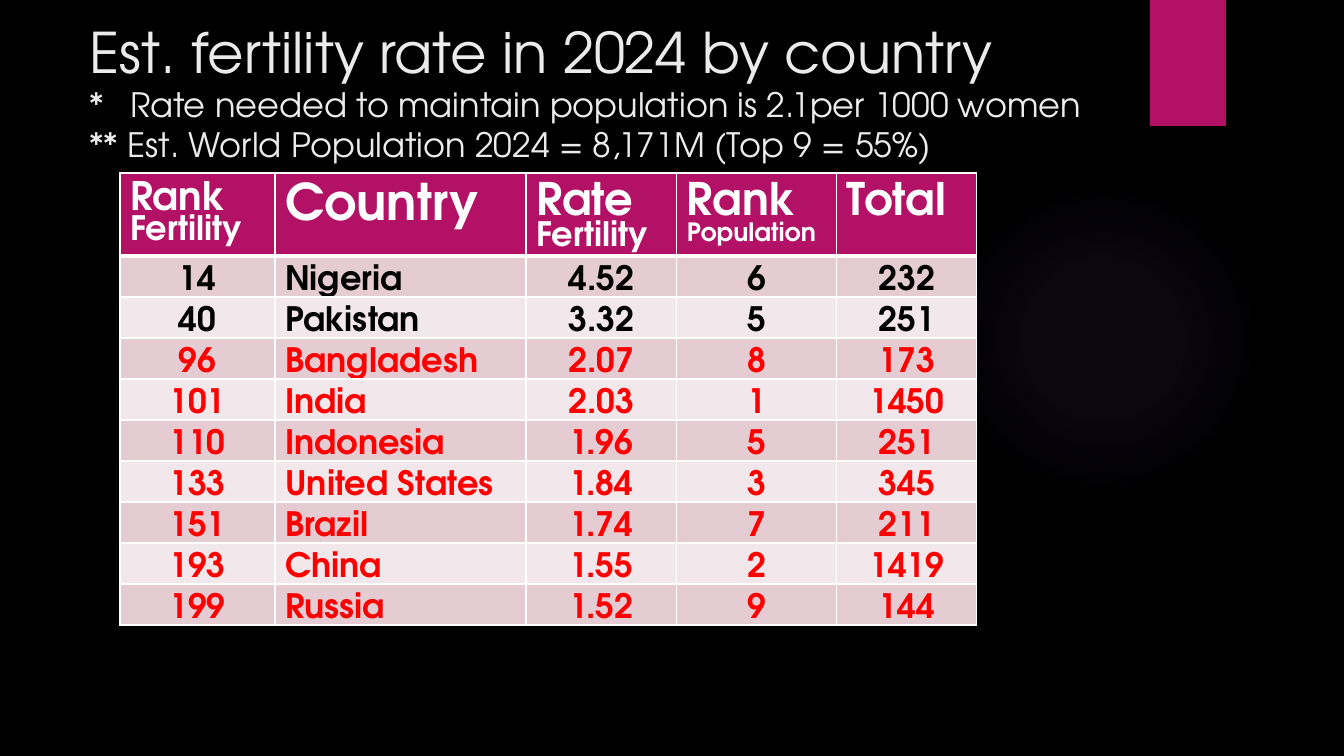
from dataclasses import dataclass

from lxml.etree import SubElement
from pptx import Presentation
from pptx.dml.color import RGBColor
from pptx.enum.shapes import MSO_SHAPE as Shape
from pptx.enum.text import MSO_ANCHOR as Anchor, MSO_AUTO_SIZE as AutoSize, PP_ALIGN as Align
from pptx.oxml.ns import qn
from pptx.util import Emu, Pt

FONT = "TeX Gyre Adventor"
COLORS = {
    "background": "000000", "accent": "B31166", "glow": "9B6BF2",
    "title": "EBEBEB", "header": "FFFFFF", "border": "FFFFFF",
    "growing": "000000", "shrinking": "FF0000",
    "odd": "E5CCD3", "even": "F2E7EA",
}
REPLACEMENT_RATE = 2.1
BODY_SIZE = 24


@dataclass(frozen=True)
class Column:
    width: int
    heading: str
    heading_size: int
    sub: str = ""
    sub_size: int = 24
    align: Align = Align.CENTER


@dataclass(frozen=True)
class Country:
    fertility_rank: int
    name: str
    rate: float
    population_rank: int
    total: int


COLUMNS = [
    Column(155, "Rank", 28, "Fertility"),
    Column(251, "Country", 36, align=Align.LEFT),
    Column(151, "Rate", 32, "Fertility"),
    Column(160, "Rank", 32, "Population", 18),
    Column(140, "Total", 32),
]
COUNTRIES = [
    Country(14, "Nigeria", 4.52, 6, 232),
    Country(40, "Pakistan", 3.32, 5, 251),
    Country(96, "Bangladesh", 2.07, 8, 173),
    Country(101, "India", 2.03, 1, 1450),
    Country(110, "Indonesia", 1.96, 5, 251),
    Country(133, "United States", 1.84, 3, 345),
    Country(151, "Brazil", 1.74, 7, 211),
    Country(193, "China", 1.55, 2, 1419),
    Country(199, "Russia", 1.52, 9, 144),
]
TITLE_LINES = [
    ("Est. fertility rate in 2024 by country", 40),
    ("*\tRate needed to maintain population is 2.1per 1000 women", 24),
    ("** Est. World Population 2024 = 8,171M (Top 9 = 55%)", 24),
]


def px(n: int) -> Emu:
    return Emu(round(n * 914400 / 100.8))


def rgb(name: str) -> RGBColor:
    return RGBColor.from_string(COLORS[name])


def set_attrs(obj, values: dict) -> None:
    for key, value in values.items():
        setattr(obj, key, value)


def add_run(p, text: str, size: int, color: str, bold: bool = False) -> None:
    r = p.add_run()
    r.text = text
    set_attrs(r.font, {"name": FONT, "size": Pt(size), "bold": bold})
    r.font.color.rgb = rgb(color)


def add_plain_shape(s, kind: Shape, left: int, top: int, width: int, height: int):
    sp = s.shapes.add_shape(kind, px(left), px(top), px(width), px(height))
    sp.shadow.inherit = False
    sp.line.fill.background()
    return sp


def add_glow(s) -> None:
    """Add a circle that fades from a faint tint to clear at its rim."""
    sp = add_plain_shape(s, Shape.OVAL, 948, 184, 310, 310)
    sp.fill.gradient()
    grad = sp.fill._xPr.find(qn("a:gradFill"))
    for child in list(grad):
        grad.remove(child)
    stops = SubElement(grad, qn("a:gsLst"))
    for position, alpha in ((0, 7), (36, 6), (69, 0)):
        stop = SubElement(stops, qn("a:gs"), pos=str(position * 1000))
        color = SubElement(stop, qn("a:srgbClr"), val=COLORS["glow"])
        SubElement(color, qn("a:alpha"), val=str(alpha * 1000))
    circle = SubElement(grad, qn("a:path"), path="circle")
    SubElement(circle, qn("a:fillToRect"), l="50000", t="50000", r="50000", b="50000")


def add_accent(s) -> None:
    sp = add_plain_shape(s, Shape.RECTANGLE, 1150, 0, 76, 126)
    sp.fill.solid()
    sp.fill.fore_color.rgb = rgb("accent")


def fill_title(s) -> None:
    sp = s.shapes.title
    set_attrs(sp, {"left": px(79), "top": px(8), "width": px(1037), "height": px(156)})
    tf = sp.text_frame
    set_attrs(tf, {"word_wrap": True, "auto_size": AutoSize.NONE,
                   "vertical_anchor": Anchor.BOTTOM, "margin_top": 0, "margin_bottom": 0})
    p = tf.paragraphs[0]
    tabs = SubElement(p._p.get_or_add_pPr(), qn("a:tabLst"))
    SubElement(tabs, qn("a:tab"), pos=str(px(41)), algn="l")
    set_attrs(p, {"alignment": Align.LEFT, "line_spacing": Pt(28.5)})
    for i, (text, size) in enumerate(TITLE_LINES):
        if i:
            p.add_line_break()
        add_run(p, text, size, "title")


def style_cell(cell, fill: str, top: int = 1, bottom: int = 1) -> None:
    """Set borders, in points, then fill and margins."""
    tc_pr = cell._tc.get_or_add_tcPr()
    for tag, width in (("a:lnL", 1), ("a:lnR", 1), ("a:lnT", top), ("a:lnB", bottom)):
        ln = SubElement(tc_pr, qn(tag), w=str(Pt(width)))
        SubElement(SubElement(ln, qn("a:solidFill")), qn("a:srgbClr"), val=COLORS["border"])
    cell.fill.solid()
    cell.fill.fore_color.rgb = rgb(fill)
    set_attrs(cell, {"margin_top": 0, "margin_bottom": 0, "vertical_anchor": Anchor.TOP})


def write_line(p, text: str, size: int, color: str, align: Align, leading: float) -> None:
    set_attrs(p, {"alignment": align, "line_spacing": Pt(round(size * leading))})
    add_run(p, text, size, color, bold=True)


def add_fertility_table(s) -> None:
    header_height, row_height = 83, 41
    table = s.shapes.add_table(
        len(COUNTRIES) + 1, len(COLUMNS), px(120), px(173),
        px(sum(c.width for c in COLUMNS)),
        px(header_height + row_height * len(COUNTRIES))).table
    for i, row in enumerate(table.rows):
        row.height = px(row_height if i else header_height)

    for j, column in enumerate(COLUMNS):
        table.columns[j].width = px(column.width)
        cell = table.cell(0, j)
        style_cell(cell, "accent", bottom=3)
        tf = cell.text_frame
        write_line(tf.paragraphs[0], column.heading, column.heading_size, "header", Align.LEFT, 1.13)
        if column.sub:
            write_line(tf.add_paragraph(), column.sub, column.sub_size, "header", Align.LEFT, 0.88)

    for i, country in enumerate(COUNTRIES, 1):
        color = "growing" if country.rate > REPLACEMENT_RATE else "shrinking"
        values = (country.fertility_rank, country.name, country.rate,
                  country.population_rank, country.total)
        for j, (column, value) in enumerate(zip(COLUMNS, values)):
            cell = table.cell(i, j)
            style_cell(cell, "odd" if i % 2 else "even", top=3 if i == 1 else 1)
            write_line(cell.text_frame.paragraphs[0], str(value), BODY_SIZE, color, column.align, 1.2)


def main() -> None:
    prs = Presentation()
    set_attrs(prs, {"slide_width": px(1344), "slide_height": px(756)})
    s = prs.slides.add_slide(prs.slide_layouts[5])
    s.background.fill.solid()
    s.background.fill.fore_color.rgb = rgb("background")
    add_glow(s)
    add_accent(s)
    fill_title(s)
    add_fertility_table(s)
    prs.save("out.pptx")


if __name__ == "__main__":
    main()
